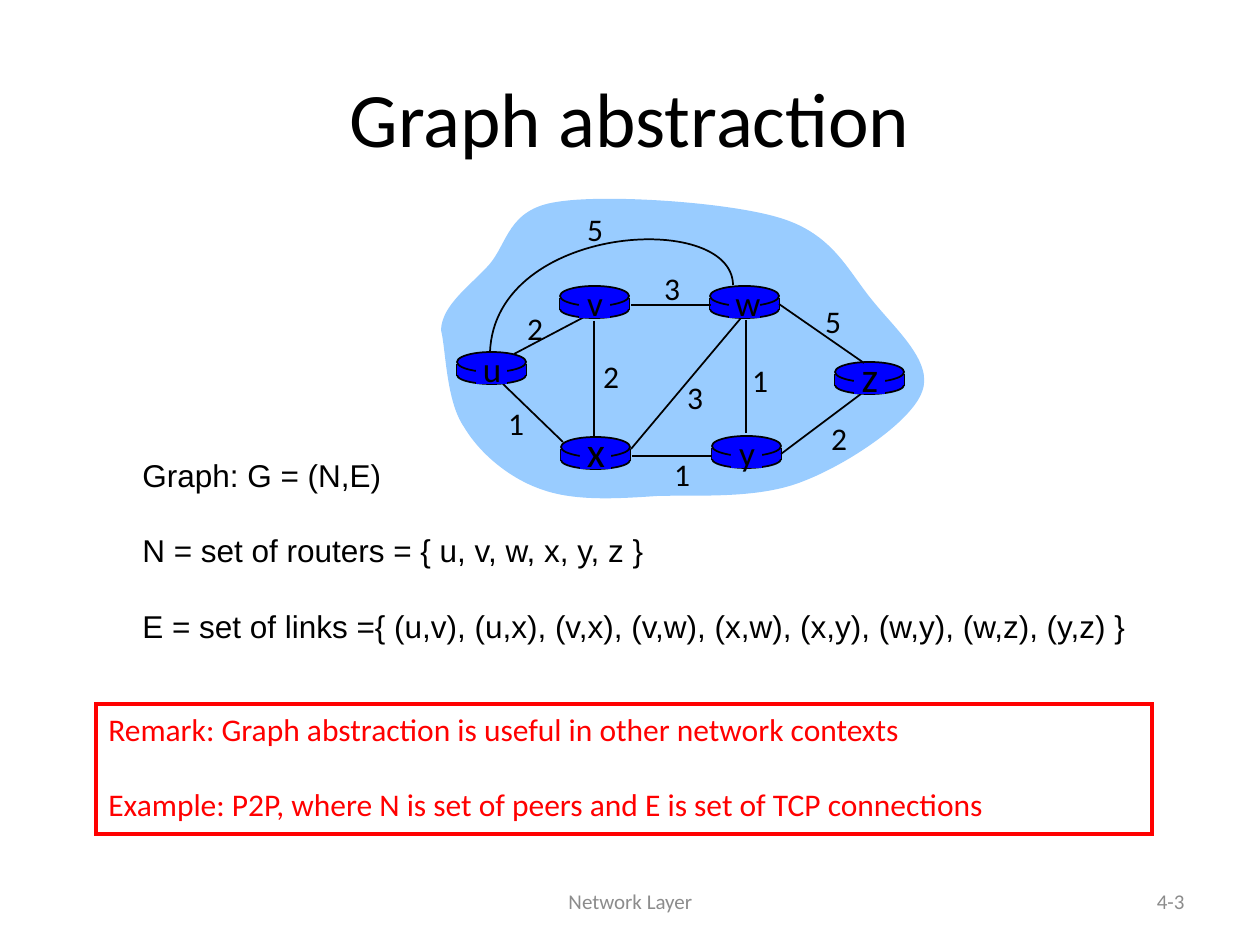
import pptx
import pptx.util
import pptx.dml.color
import pptx.enum.shapes
import pptx.enum.text
import pptx.oxml
import pptx.oxml.ns
import lxml.etree

SCALE = 914400 / 126
COLORS = {"ink": "000000", "router": "0000FF", "cloud": "99CCFF", "remark": "FF0000", "footer": "8C8C8C"}
KIND = pptx.enum.shapes.MSO_SHAPE
ALIGN = pptx.enum.text.PP_ALIGN
ANCHOR = pptx.enum.text.MSO_ANCHOR
FIT = pptx.enum.text.MSO_AUTO_SIZE
QN = pptx.oxml.ns.qn

CLOUD = [
    (441, 330), (442, 305), (470, 286), (489, 265), (508, 243), (508, 209), (557, 202),
    (605, 194), (728, 202), (780, 218), (833, 234), (848, 271), (872, 300),
    (895, 329), (934, 362), (922, 392), (911, 422), (848, 464), (804, 481),
    (760, 499), (702, 495), (658, 496), (615, 499), (575, 501), (543, 490),
    (510, 479), (480, 454), (464, 427), (446, 401), (446, 350), (441, 330),
]
ARC = [(733, 285), (732, 210), (495, 224), (490, 352)]
LINKS = [
    (514, 354, 590, 314), (746, 320, 746, 433), (594, 321, 594, 438),
    (631, 449, 741, 318), (781, 454, 861, 394), (712, 456, 632, 456),
    (563, 442, 503, 384), (711, 305, 631, 305), (864, 363, 779, 304),
]
ROUTERS = [
    ("u", 457, 352, 20), ("x", 561, 437, 24), ("v", 560, 286, 20),
    ("w", 710, 286, 20), ("y", 712, 436, 20), ("z", 835, 362, 24),
]
COSTS = [
    ("2", 535, 303), ("2", 611, 351), ("1", 516, 398), ("3", 695, 372), ("1", 682, 449),
    ("1", 760, 355), ("2", 839, 413), ("5", 833, 296), ("3", 672, 263), ("5", 595, 204),
]
GRAPH = [
    "Graph: G = (N,E)",
    "N = set of routers = { u, v, w, x, y, z }",
    "E = set of links ={ (u,v), (u,x), (v,x), (v,w), (x,w), (x,y), (w,y), (w,z), (y,z) }",
]
REMARK = [
    "Remark: Graph abstraction is useful in other network contexts",
    "Example: P2P, where N is set of peers and E is set of TCP connections",
]


def px(*nums):
    """Turn pixel lengths into EMU."""
    return [pptx.util.Emu(round(n * SCALE)) for n in nums]


def tint(name):
    """Look up a named colour."""
    return pptx.dml.color.RGBColor.from_string(COLORS[name])


def paint(shape, fill=None, line=None, width=1):
    """Set fill and outline, and drop the shadow."""
    shape.shadow.inherit = False
    if fill:
        shape.fill.solid()
        shape.fill.fore_color.rgb = tint(fill)
    else:
        shape.fill.background()
    if line:
        shape.line.color.rgb = tint(line)
        shape.line.width = pptx.util.Pt(width)
        edge = shape._element.spPr.find(QN("a:ln"))
        lxml.etree.SubElement(edge, QN("a:miter"), lim="800000")
    else:
        shape.line.fill.background()


def write(shape, lines, size, color="ink", face="Calibri", align=ALIGN.LEFT,
          anchor=ANCHOR.TOP, wrap=False):
    """Fill a shape with evenly spaced paragraphs."""
    frame = shape.text_frame
    frame.word_wrap = wrap
    frame.auto_size = FIT.NONE if wrap else FIT.SHAPE_TO_FIT_TEXT
    frame.vertical_anchor = anchor
    for i, line in enumerate(lines):
        para = frame.add_paragraph() if i else frame.paragraphs[0]
        para.alignment = align
        if i:
            para.space_before = pptx.util.Pt(21.4)
        run = para.add_run()
        run.text = line
        run.font.size = pptx.util.Pt(size)
        run.font.name = face
        run.font.color.rgb = tint(color)


def label(shapes, text, mid, top, size):
    """Add a short text centred on a point."""
    wide, high = {18: (44, 50), 20: (44, 54), 24: (50, 63)}[size]
    box = shapes.add_textbox(*px(mid - wide / 2, top, wide, high))
    write(box, [text], size, align=ALIGN.CENTER)


def block(shapes, kind, place, line=None):
    """Add a solid piece of a router."""
    paint(shapes.add_shape(kind, *px(*place)), "router", line)


def link(shapes, ends):
    """Add a straight black line."""
    line = shapes.add_connector(pptx.enum.shapes.MSO_CONNECTOR.STRAIGHT, *px(*ends))
    line.line.color.rgb = tint("ink")
    line.line.width = pptx.util.Pt(1)
    lxml.etree.SubElement(line._element.spPr, QN("a:effectLst"))


def curve(shapes, knots, place, close, fill=None, line=None):
    """Add an outline of chained cubic curves inside its bounds."""
    left, top, wide, high = place
    pen = shapes.build_freeform(*px(left, top), scale=1.0)
    pen.add_line_segments([px(left + wide, top), px(left + wide, top + high)], close=False)
    shape = pen.convert_to_shape()
    trace = shape._element.spPr.find(".//" + QN("a:path"))
    for part in list(trace):
        trace.remove(part)
    trace.set("w", str(px(wide)[0]))
    trace.set("h", str(px(high)[0]))
    for i, (x, y) in enumerate(knots):
        if i == 0:
            step = lxml.etree.SubElement(trace, QN("a:moveTo"))
        elif i % 3 == 1:
            step = lxml.etree.SubElement(trace, QN("a:cubicBezTo"))
        across, down = px(x - left, y - top)
        lxml.etree.SubElement(step, QN("a:pt"), x=str(across), y=str(down))
    if close:
        lxml.etree.SubElement(trace, QN("a:close"))
    paint(shape, fill, line)


def router(shapes, left, top):
    """Add a drum."""
    wide = 69
    block(shapes, KIND.OVAL, (left, top + 14, wide, 18), "ink")
    for side in (left, left + wide):
        link(shapes, (side, top + 12, side, top + 24))
    block(shapes, KIND.RECTANGLE, (left, top + 12, wide, 11))
    block(shapes, KIND.OVAL, (left, top, wide, 20), "ink")


def name(shapes, text, left, top, size):
    """Add the name of a router on a plain patch."""
    block(shapes, KIND.RECTANGLE, (left + 19, top + 3, 31, 29))
    label(shapes, text, left + 35, top - (11 if size < 24 else 18), size)


def footer(shapes, text, place, align):
    """Add a grey footer text."""
    box = shapes.add_textbox(*px(*place))
    write(box, [text], 12, "footer", align=align, anchor=ANCHOR.MIDDLE, wrap=True)


def main():
    """Build the slide and save it."""
    deck = pptx.Presentation()
    deck.slide_width, deck.slide_height = px(1260, 945)
    slide = deck.slides.add_slide(deck.slide_layouts[5])
    shapes = slide.shapes

    title = shapes.title
    title.left, title.top, title.width, title.height = px(63, 38, 1134, 158)
    write(title, ["Graph abstraction"], 44, align=ALIGN.CENTER, anchor=ANCHOR.MIDDLE, wrap=True)

    footer(shapes, "Network Layer", (431, 876, 399, 50), ALIGN.CENTER)
    footer(shapes, "4-3", (903, 876, 294, 50), ALIGN.RIGHT)

    curve(shapes, CLOUD, (441, 198, 483, 300), True, fill="cloud")
    link(shapes, LINKS[0])
    for text, left, top, size in ROUTERS:
        router(shapes, left, top)
    for ends in LINKS[1:]:
        link(shapes, ends)
    curve(shapes, ARC, (490, 239, 243, 113), False, line="ink")
    for item in ROUTERS:
        name(shapes, *item)
    for item in COSTS:
        label(shapes, *item, 18)

    write(shapes.add_textbox(*px(130, 450, 1019, 202)), GRAPH, 18, face="Arial")
    remark = shapes.add_shape(KIND.RECTANGLE, *px(96, 704, 1056, 130))
    paint(remark, line="remark", width=2.25)
    write(remark, REMARK, 18, "remark")

    deck.save("out.pptx")


if __name__ == "__main__":
    main()
